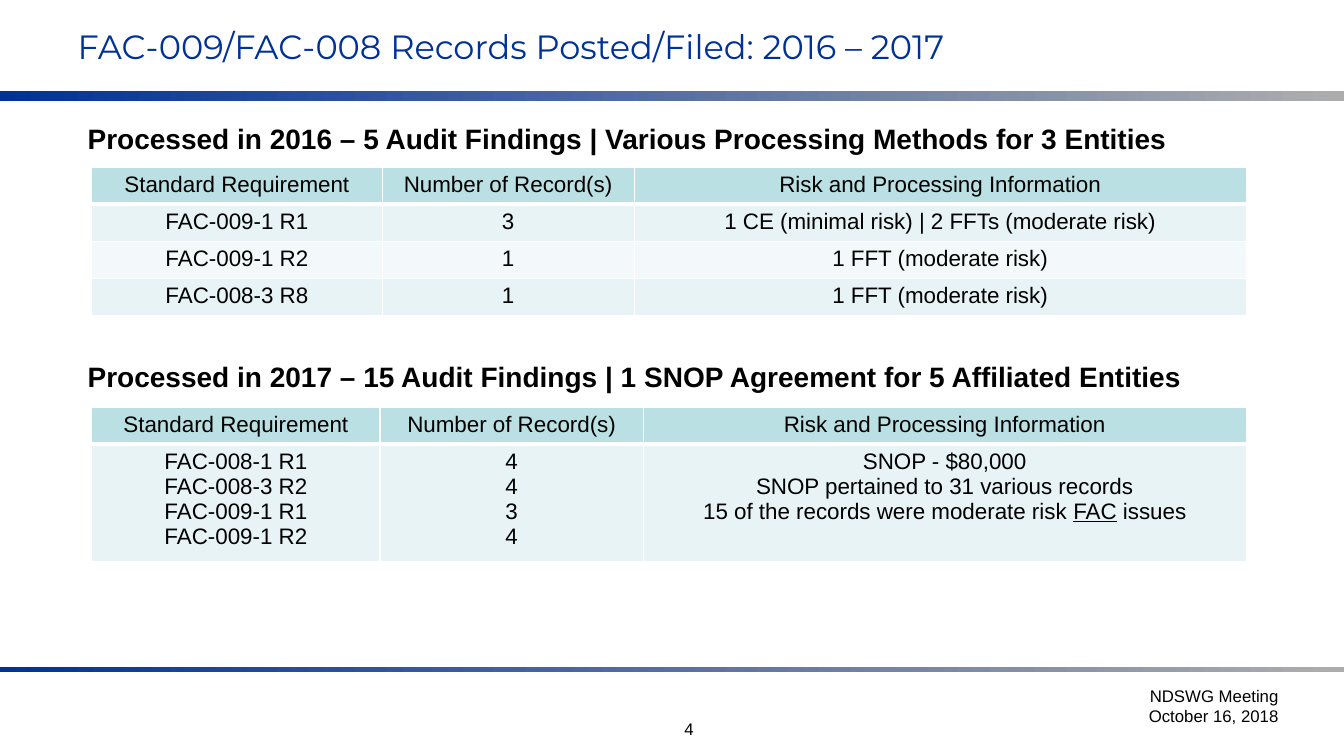
import pptx
import pptx.util
import pptx.dml.color
import pptx.enum.shapes
import pptx.enum.text
import pptx.oxml.ns
from dataclasses import dataclass
from lxml import etree

# Content
TITLE = "FAC-009/FAC-008 Records Posted/Filed: 2016 – 2017"
HEADINGS = [
    "Processed in 2016 – 5 Audit Findings | Various Processing Methods for 3 Entities",
    "Processed in 2017 – 15 Audit Findings | 1 SNOP Agreement for 5 Affiliated Entities",
]
HEADER = ["Standard Requirement", "Number of Record(s)", "Risk and Processing Information"]
RECORDS_2016 = [
    HEADER,
    ["FAC-009-1 R1", "3", "1 CE (minimal risk) | 2 FFTs (moderate risk)"],
    ["FAC-009-1 R2", "1", "1 FFT (moderate risk)"],
    ["FAC-008-3 R8", "1", "1 FFT (moderate risk)"],
]
# A cell is a string or a list of lines; a line is a string or a list of
# (text, underlined) spans.
RECORDS_2017 = [
    HEADER,
    [
        ["FAC-008-1 R1", "FAC-008-3 R2", "FAC-009-1 R1", "FAC-009-1 R2"],
        ["4", "4", "3", "4"],
        [
            "SNOP - $80,000",
            "SNOP pertained to 31 various records",
            [("15 of the records were moderate risk ", False), ("FAC", True), (" issues", False)],
        ],
    ],
]
FOOTER = ["NDSWG Meeting", "October 16, 2018"]
PAGE_NUMBER = ["4"]

# Layout in px, 100 to the inch
SLIDE_WIDTH, SLIDE_HEIGHT = 1333, 750
TABLES = [
    # records, top, column widths, row heights
    (RECORDS_2016, 166, [288, 250, 607], [35, 35, 35, 35]),
    (RECORDS_2017, 404, [286, 261, 598], [35, 109]),
]
TABLE_LEFT = 91
BARS = [(90, 10), (662, 5)]  # top, height


@dataclass(frozen=True)
class Theme:
    title_font: str = "Montserrat"
    body_font: str = "Arial"
    title_size: int = 24
    heading_size: int = 20
    table_size: int = 16
    footer_size: int = 12
    blue: str = "003296"
    grey: str = "ADADAD"
    black: str = "000000"
    white: str = "FFFFFF"
    header_fill: str = "BBE0E3"
    band_fills: tuple = ("E7F3F4", "F3F9FA")


THEME = Theme()
ALIGN = pptx.enum.text.PP_ALIGN


def px(length):
    return pptx.util.Emu(length * 9144)


def rgb(code):
    return pptx.dml.color.RGBColor.from_string(code)


def write(frame, lines, size, align, font=THEME.body_font, color=THEME.black, bold=False):
    for index, line in enumerate(lines):
        para = frame.paragraphs[0] if index == 0 else frame.add_paragraph()
        para.alignment = align
        for text, underlined in ([(line, False)] if isinstance(line, str) else line):
            span = para.add_run()
            span.text = text
            span.font.name = font
            span.font.size = pptx.util.Pt(size)
            span.font.color.rgb = rgb(color)
            span.font.bold = bold
            span.font.underline = underlined


def add_text(page, area, lines, size, align, bold=False):
    box = page.shapes.add_textbox(*map(px, area))
    box.text_frame.word_wrap = True
    write(box.text_frame, lines, size, align, bold=bold)
    return box


def add_bar(page, top, height):
    bar = page.shapes.add_shape(
        pptx.enum.shapes.MSO_SHAPE.RECTANGLE, 0, px(top), px(SLIDE_WIDTH), px(height)
    )
    bar.shadow.inherit = False
    bar.line.fill.background()
    bar.fill.gradient()
    bar.fill.gradient_angle = 0
    for stop, color, position in zip(bar.fill.gradient_stops, (THEME.blue, THEME.grey), (0, 1)):
        stop.color.rgb = rgb(color)
        stop.position = position


def add_borders(cell, bottom_width):
    qn = pptx.oxml.ns.qn
    properties = cell._tc.get_or_add_tcPr()
    for side, width in (("L", 1), ("R", 1), ("T", 1), ("B", bottom_width)):
        line = etree.SubElement(properties, qn("a:ln" + side), w=str(pptx.util.Pt(width)))
        fill = etree.SubElement(line, qn("a:solidFill"))
        etree.SubElement(fill, qn("a:srgbClr"), val=THEME.white)


def add_records(page, records, top, widths, heights):
    frame = page.shapes.add_table(
        len(heights), len(widths), px(TABLE_LEFT), px(top), px(sum(widths)), px(sum(heights))
    )
    table = frame.table
    table.first_row = table.horz_banding = False
    for column, width in zip(table.columns, widths):
        column.width = px(width)
    for index, (row, height) in enumerate(zip(table.rows, heights)):
        row.height = px(height)
        is_header = index == 0
        color = THEME.header_fill if is_header else THEME.band_fills[(index - 1) % 2]
        for cell, content in zip(row.cells, records[index]):
            lines = [content] if isinstance(content, str) else content
            write(cell.text_frame, lines, THEME.table_size, ALIGN.CENTER)
            add_borders(cell, 3 if is_header else 1)
            cell.fill.solid()
            cell.fill.fore_color.rgb = rgb(color)


def main():
    deck = pptx.Presentation()
    deck.slide_width, deck.slide_height = px(SLIDE_WIDTH), px(SLIDE_HEIGHT)
    page = deck.slides.add_slide(deck.slide_layouts[5])

    # Page number and gradient bars
    add_text(page, (500, 708, 367, 42), PAGE_NUMBER, THEME.footer_size, ALIGN.CENTER)
    for top, height in BARS:
        add_bar(page, top, height)

    # Title
    title = page.shapes.title
    title.left, title.top, title.width, title.height = map(px, (67, 8, 1222, 75))
    title.text_frame.vertical_anchor = pptx.enum.text.MSO_ANCHOR.MIDDLE
    write(title.text_frame, [TITLE], THEME.title_size, ALIGN.LEFT, THEME.title_font, THEME.blue)

    # Headings, spaced to leave room for the first table
    body = add_text(
        page, (77, 113, 1201, 517), HEADINGS, THEME.heading_size, ALIGN.LEFT, bold=True
    )
    body.text_frame.margin_top = px(8)
    body.text_frame.paragraphs[1].space_before = pptx.util.Pt(146)

    # Footer and tables
    add_text(page, (911, 675, 367, 75), FOOTER, THEME.footer_size, ALIGN.RIGHT)
    for records, top, widths, heights in TABLES:
        add_records(page, records, top, widths, heights)

    deck.save("out.pptx")


if __name__ == "__main__":
    main()
